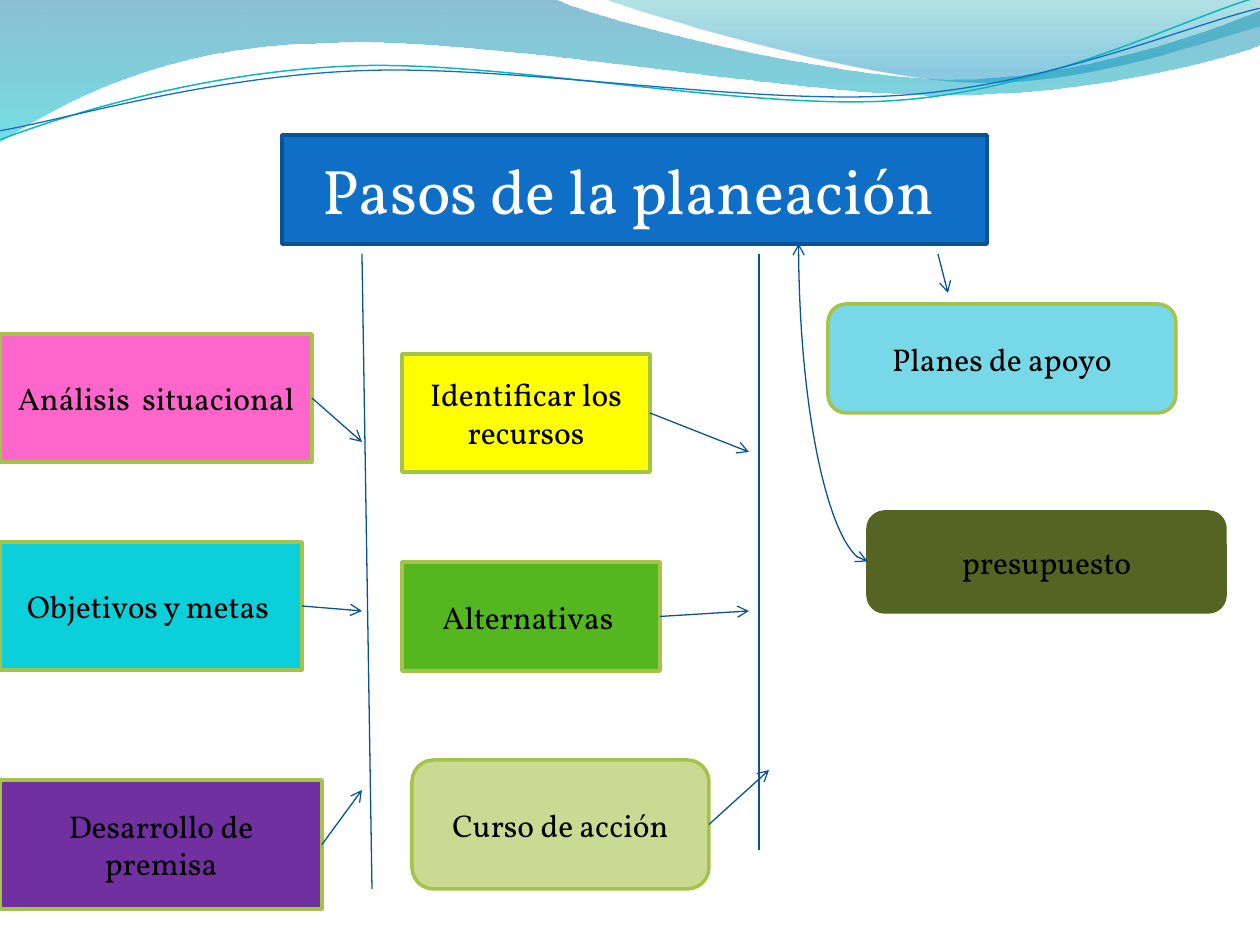
from lxml.etree import SubElement
from pptx import Presentation
from pptx.dml.color import RGBColor
from pptx.enum.shapes import MSO_CONNECTOR, MSO_SHAPE
from pptx.enum.text import MSO_ANCHOR, PP_ALIGN
from pptx.oxml.ns import qn
from pptx.util import Pt

PX = 914400 / 126
THEME = {
    "font": "Vollkorn", "title_size": 36, "box_size": 18,
    "title_text": "FFFFFF", "text": "000000",
    "title": "0F6FC6", "title_line": "0B5292",
    "box_line": "A5C249", "connector": "095295",
    "pink": "FF66CC", "cyan": "0BD0D9", "purple": "7030A0",
    "yellow": "FFFF00", "green": "55B71F", "sky": "77D9E8",
    "lime": "C9DA92", "olive": "546422",
    "wave_teal": "0AB8BF", "wave_blue": "0F6FC6",
}


def emu(px):
    return round(px * PX)


def outline(start, segments, closed):
    """Add a freeform; a segment is a line (x, y) or a cubic with three points."""
    points = [(emu(seg[i]), emu(seg[i + 1])) for seg in segments for i in range(0, len(seg), 2)]
    builder = s.shapes.build_freeform(emu(start[0]), emu(start[1]), scale=1.0)
    builder.add_line_segments(points, close=closed)
    sp = builder.convert_to_shape()
    sp.shadow.inherit = False
    # Gather each run of three line steps that belongs to a cubic into one curve
    steps = iter(list(sp._element.spPr.iter(qn("a:lnTo"))))
    for seg in segments:
        lines = [next(steps) for _ in range(len(seg) // 2)]
        if len(lines) == 3:
            curve = SubElement(lines[0].getparent(), qn("a:cubicBezTo"))
            lines[0].addprevious(curve)
            for line in lines:
                curve.append(line[0])
                line.getparent().remove(line)
    return sp


prs = Presentation()
prs.slide_width, prs.slide_height = emu(1260), emu(945)
s = prs.slides.add_slide(prs.slide_layouts[6])

# Translucent waves: start, segments, gradient stops (position, colour, opacity %)
waves = [
    ((0, 0), [(554, -1), (600, 21, 837, 79, 955, 79), (1075, 79, 1207, 33, 1260, 11),
              (1261, 45), (1238, 55, 1096, 96, 940, 95), (784, 95, 481, 35, 324, 43),
              (163, 45, 58, 105, -1, 142)],
     [(0, "0074A1", 45), (1, "00C6CF", 55)]),
    ((604, -1), [(641, 14, 859, 78, 969, 82), (1079, 87, 1211, 40, 1260, 26), (1260, 0)],
     [(0, "00A1A9", 30), (0.8, "008BBF", 45)]),
]
for start, segments, stops in waves:
    sp = outline(start, segments, True)
    sp.line.fill.background()
    sp.fill.gradient()
    sp.fill.gradient_angle = 270
    for stop, (position, color, opacity) in zip(sp.fill.gradient_stops, stops):
        stop.position = position
        stop.color.rgb = RGBColor.from_string(color)
    for clr, (_, _, opacity) in zip(sp._element.spPr.iter(qn("a:srgbClr")), stops):
        SubElement(clr, qn("a:alpha"), val=str(opacity * 1000))

# Thin wave lines, slightly turned
wave_lines = [
    ((-2, 110), [(59, 90, 199, 52, 350, 53), (499, 53, 745, 117, 896, 113),
                 (1049, 109, 1184, 45, 1260, 27)], "wave_teal", 0.85),
    ((-2, 101), [(58, 94, 207, 57, 357, 58), (509, 58, 750, 112, 902, 108),
                 (1052, 104, 1188, 52, 1262, 38)], "wave_blue", 0.75),
]
for start, segments, color, width in wave_lines:
    sp = outline(start, segments, False)
    sp.rotation = 357.3
    sp.fill.background()
    sp.line.color.rgb = RGBColor.from_string(THEME[color])
    sp.line.width = Pt(width)

# Title and step boxes: text, left, top, width, height, shape, fill, line
RECT, ROUND = MSO_SHAPE.FLOWCHART_PROCESS, MSO_SHAPE.ROUNDED_RECTANGLE
boxes = [
    ("Análisis  situacional", 0, 334, 312, 128, RECT, "pink", "box_line"),
    ("Objetivos y metas ", 0, 542, 302, 128, RECT, "cyan", "box_line"),
    ("Desarrollo de premisa", 0, 780, 322, 129, RECT, "purple", "box_line"),
    ("Identificar los recursos", 402, 354, 248, 118, RECT, "yellow", "box_line"),
    ("Alternativas ", 402, 562, 258, 109, RECT, "green", "box_line"),
    ("Planes de apoyo", 828, 304, 348, 109, ROUND, "sky", "box_line"),
    ("Curso de acción", 412, 760, 297, 129, ROUND, "lime", "box_line"),
    ("presupuesto", 868, 512, 357, 100, ROUND, "olive", "olive"),
    ("Pasos de la planeación ", 282, 135, 705, 109, RECT, "title", "title_line"),
]
steps = {}
for text, x, y, w, h, kind, fill, line in boxes:
    sp = s.shapes.add_shape(kind, emu(x), emu(y), emu(w), emu(h))
    sp.shadow.inherit = False
    sp.fill.solid()
    sp.fill.fore_color.rgb = RGBColor.from_string(THEME[fill])
    sp.line.color.rgb = RGBColor.from_string(THEME[line])
    sp.line.width = Pt(2)
    tf = sp.text_frame
    tf.word_wrap = True
    tf.vertical_anchor = MSO_ANCHOR.MIDDLE
    p = tf.paragraphs[0]
    p.text = text
    p.alignment = PP_ALIGN.CENTER
    r = p.runs[0]
    is_title = fill == "title"
    r.font.name = THEME["font"]
    r.font.size = Pt(THEME["title_size" if is_title else "box_size"])
    r.font.color.rgb = RGBColor.from_string(THEME["title_text" if is_title else "text"])
    steps[text.strip()] = sp

# Connectors: source box or None, begin, end, arrowheads
STRAIGHT, CURVE = MSO_CONNECTOR.STRAIGHT, MSO_CONNECTOR.CURVE
connectors = [
    (STRAIGHT, None, (362, 254), (372, 889), []),
    (STRAIGHT, "Objetivos y metas", (302, 606), (362, 611), ["tailEnd"]),
    (STRAIGHT, "Análisis  situacional", (312, 398), (362, 442), ["tailEnd"]),
    (STRAIGHT, "Desarrollo de premisa", (322, 844), (362, 790), ["tailEnd"]),
    (STRAIGHT, None, (759, 254), (759, 850), []),
    (STRAIGHT, "Alternativas", (660, 616), (749, 611), ["tailEnd"]),
    (STRAIGHT, "Curso de acción", (709, 825), (769, 770), ["tailEnd"]),
    (STRAIGHT, "Identificar los recursos", (650, 413), (749, 452), ["tailEnd"]),
    (STRAIGHT, None, (938, 254), (948, 293), ["tailEnd"]),
    (CURVE, None, (992, 368), (674, 437), ["headEnd", "tailEnd"]),
]
for kind, source, begin, end, heads in connectors:
    c = s.shapes.add_connector(kind, *[emu(v) for v in begin + end])
    if source:
        c.begin_connect(steps[source], 3)
    c.line.color.rgb = RGBColor.from_string(THEME["connector"])
    c.line.width = Pt(0.75)
    spPr = c._element.spPr
    for head in heads:
        SubElement(spPr.find(qn("a:ln")), qn(f"a:{head}"), type="arrow")
    SubElement(spPr, qn("a:effectLst"))
    if kind == CURVE:  # a quarter turn makes it leave the title downwards
        spPr.find(qn("a:xfrm")).set("rot", "16200000")
        spPr.find(qn("a:prstGeom")).set("prst", "curvedConnector2")

prs.save("out.pptx")
